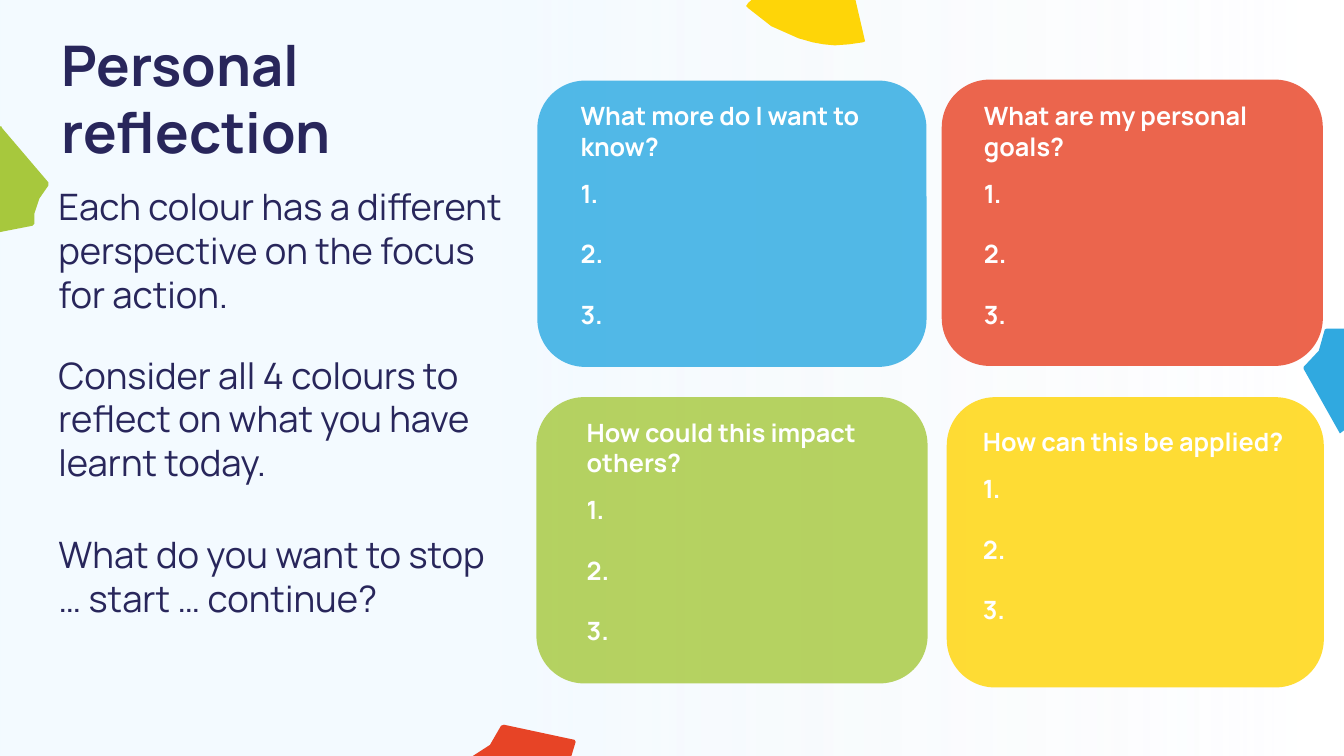
from dataclasses import dataclass

from pptx import Presentation
from pptx.dml.color import RGBColor
from pptx.enum.shapes import MSO_SHAPE as Preset
from pptx.oxml.ns import qn
from pptx.util import Inches, Pt
from lxml.etree import SubElement


@dataclass(frozen=True)
class Theme:
    font: str = "Manrope"
    ink: str = "28265B"
    white: str = "FFFFFF"
    wash_right: str = "F6F8FC"
    wash_left: str = "F3FAFF"
    title_size: int = 40
    body_size: int = 26
    card_size: int = 18
    card_opacity: int = 82


@dataclass(frozen=True)
class Box:
    left: float
    top: float
    width: float
    height: float

    def lengths(self) -> list:
        return [Inches(v) for v in (self.left, self.top, self.width, self.height)]


@dataclass(frozen=True)
class Message:
    text: str
    box: Box
    size: int
    bold: bool = False


@dataclass(frozen=True)
class Card:
    question: str
    color: str
    panel: Box
    text_box: Box


@dataclass(frozen=True)
class Petal:
    color: str
    outline: tuple


THEME = Theme()
ANSWER_COUNT = 3
ANSWER_INDENT = Inches(0.38)
FIRST_ANSWER_GAP, ANSWER_GAP = Pt(12), Pt(21.6)

MESSAGES = [
    Message("Personal reflection", Box(0.51, 0.25, 5.21, 1.45), THEME.title_size, True),
    Message("Each colour has a different perspective on the focus for action.",
            Box(0.48, 1.78, 4.72, 1.41), THEME.body_size),
    Message("Consider all 4 colours to reflect on what you have learnt today.",
            Box(0.48, 3.45, 4.86, 1.41), THEME.body_size),
    Message("What do you want to stop … start … continue?",
            Box(0.48, 5.23, 4.72, 1.28), THEME.body_size),
]

CARDS = [
    Card("What more do I want to know?", "2DAAE2",
         Box(5.33, 0.8, 3.86, 2.84), Box(5.66, 0.95, 3.5, 2.39)),
    Card("What are my personal goals?", "E84427",
         Box(9.34, 0.79, 3.78, 2.84), Box(9.66, 0.95, 3.47, 2.46)),
    Card("How could this impact others?", "A7C93F",
         Box(5.32, 3.94, 3.88, 2.84), Box(5.72, 4.09, 3.16, 2.39)),
    Card("How can this be applied?", "FFD508",
         Box(9.39, 3.94, 3.74, 2.88), Box(9.65, 4.18, 3.44, 2.09)),
]

GREEN_PETAL = Petal("A7C83D", (
    (0.01, 1.25), (0.02, 1.27), (0.48, 1.81), (0.48, 1.84), (0.39, 1.97), (0.34, 2.12),
    (0.34, 2.22), (0.32, 2.24), (-0.09, 2.32), (-0.38, 2.37), (-0.4, 2.35),
    (-0.41, 2.08), (-0.35, 1.82), (-0.26, 1.6), (-0.13, 1.4), (-0.04, 1.3)))
RED_PETAL = Petal("E74426", (
    (5.44, 7.87), (5.19, 8.09), (4.9, 8.23), (4.88, 8.22), (4.74, 7.72), (4.68, 7.53),
    (4.69, 7.5), (4.86, 7.39), (4.97, 7.2), (5, 7.19), (5.7, 7.34), (5.71, 7.36),
    (5.65, 7.56), (5.54, 7.74)))
YELLOW_PETAL = Petal("FED508", (
    (7.92, 0.38), (7.65, 0.26), (7.42, 0.08), (7.4, 0.06), (7.42, 0.03), (7.75, -0.27),
    (7.94, -0.44), (7.97, -0.44), (8.09, -0.35), (8.23, -0.31), (8.39, -0.31),
    (8.41, -0.3), (8.48, -0.02), (8.58, 0.41), (8.56, 0.42), (8.42, 0.44), (8.28, 0.45),
    (8.17, 0.44), (8.06, 0.42)))
BLUE_PETAL = Petal("30A9E0", (
    (13.33, 4.27), (13.4, 4.22), (13.54, 4.1), (13.65, 3.97), (13.78, 3.76),
    (13.86, 3.53), (13.9, 3.27), (13.88, 3.25), (13.4, 3.26), (13.16, 3.26),
    (13.14, 3.27), (13.08, 3.48), (12.93, 3.64), (12.93, 3.66), (13.2, 4.14), (13.29, 4.3)))


def set_alpha(color_element, percent: int) -> None:
    SubElement(color_element, qn("a:alpha")).set("val", str(percent * 1000))


def paint(shape, color: str, opacity: int = 100) -> None:
    shape.shadow.inherit = False
    shape.line.fill.background()
    shape.fill.solid()
    shape.fill.fore_color.rgb = RGBColor.from_string(color)
    if opacity < 100:
        set_alpha(shape._element.spPr.find(".//" + qn("a:srgbClr")), opacity)


def add_wash(shapes) -> None:
    """Blue tint on the left that fades out towards the right."""
    wash = shapes.add_shape(Preset.RECTANGLE, *Box(0, 0, 13.33, 7.55).lengths())
    wash.shadow.inherit = False
    wash.line.fill.background()
    wash.fill.gradient()
    wash.fill.gradient_angle = 180
    stops = zip(wash.fill.gradient_stops, (0, 0.66), (THEME.wash_right, THEME.wash_left))
    for stop, position, color in stops:
        stop.position = position
        stop.color.rgb = RGBColor.from_string(color)
    set_alpha(wash._element.spPr.find(".//" + qn("a:srgbClr")), 0)


def add_petal(shapes, petal: Petal) -> None:
    points = [(Inches(x), Inches(y)) for x, y in petal.outline]
    builder = shapes.build_freeform(*points[0])
    builder.add_line_segments(points[1:], close=True)
    paint(builder.convert_to_shape(), petal.color)


def write(paragraph, text: str, size: int, color: str, bold: bool) -> None:
    run = paragraph.add_run()
    run.text = text
    for name, value in {"name": THEME.font, "size": Pt(size), "bold": bold}.items():
        setattr(run.font, name, value)
    run.font.color.rgb = RGBColor.from_string(color)


def add_text_frame(shapes, box: Box):
    frame = shapes.add_textbox(*box.lengths()).text_frame
    frame.word_wrap = True
    return frame


def add_message(shapes, message: Message) -> None:
    frame = add_text_frame(shapes, message.box)
    write(frame.paragraphs[0], message.text, message.size, THEME.ink, message.bold)


def add_answer(frame, gap: Pt) -> None:
    """Numbered line left open for an answer."""
    paragraph = frame.add_paragraph()
    properties = paragraph._p.get_or_add_pPr()
    for name, value in {"marL": ANSWER_INDENT, "indent": -ANSWER_INDENT}.items():
        properties.set(name, str(int(value)))
    SubElement(properties, qn("a:buFont")).set("typeface", "+mj-lt")
    SubElement(properties, qn("a:buAutoNum")).set("type", "arabicPeriod")
    paragraph.space_before = gap
    write(paragraph, " ", THEME.card_size, THEME.white, True)


def add_card(shapes, card: Card) -> None:
    group = shapes.add_group_shape().shapes
    panel = group.add_shape(Preset.ROUNDED_RECTANGLE, *card.panel.lengths())
    paint(panel, card.color, THEME.card_opacity)
    frame = add_text_frame(group, card.text_box)
    write(frame.paragraphs[0], card.question, THEME.card_size, THEME.white, True)
    for index in range(ANSWER_COUNT):
        add_answer(frame, ANSWER_GAP if index else FIRST_ANSWER_GAP)


def main() -> None:
    presentation = Presentation()
    presentation.slide_width, presentation.slide_height = Inches(13.33), Inches(7.5)
    shapes = presentation.slides.add_slide(presentation.slide_layouts[6]).shapes
    add_wash(shapes)
    for petal in (GREEN_PETAL, RED_PETAL, YELLOW_PETAL, BLUE_PETAL):
        add_petal(shapes, petal)
    for card in CARDS:
        add_card(shapes, card)
    for message in MESSAGES:
        add_message(shapes, message)
    presentation.save("out.pptx")


if __name__ == "__main__":
    main()
